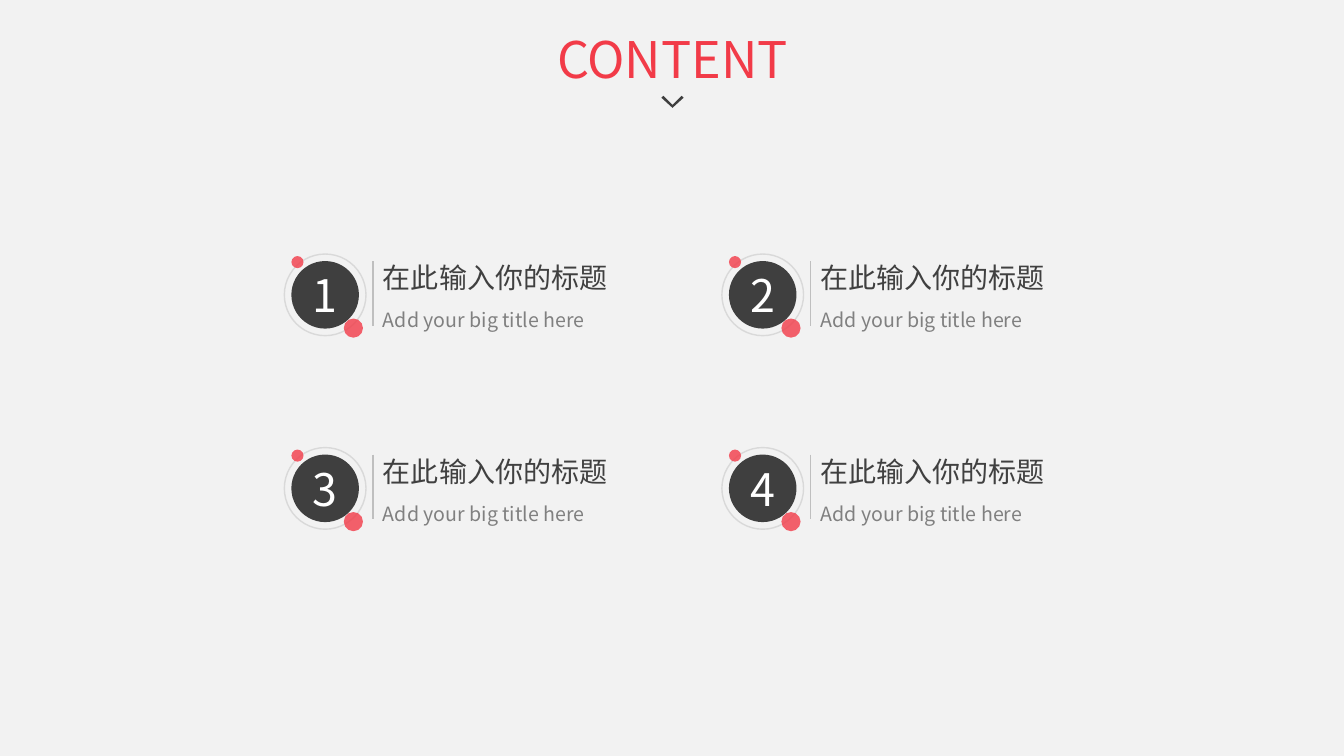
from lxml import etree
from pptx import Presentation
from pptx.dml.color import RGBColor
from pptx.enum import shapes, text
from pptx.oxml.ns import qn
from pptx.util import Inches, Pt

FONT = "Noto Sans CJK SC"
BACKGROUND = RGBColor(0xF2, 0xF2, 0xF2)
RED = RGBColor(0xF2, 0x3B, 0x48)
DARK = RGBColor(0x3F, 0x3F, 0x3F)
HEADING = RGBColor(0x40, 0x40, 0x40)
GRAY = RGBColor(0x80, 0x80, 0x80)
RING = RGBColor(0xD9, 0xD9, 0xD9)
DIVIDER = RGBColor(0xBF, 0xBF, 0xBF)
WHITE = RGBColor(0xFF, 0xFF, 0xFF)

COLUMNS = (2.82, 7.16)
ROWS = (2.52, 4.44)
CHEVRON = ((6.76, 0.95), (6.78, 0.97), (6.67, 1.07),
           (6.56, 0.97), (6.58, 0.95), (6.67, 1.04))


def write(shape, words, size, color, alignment):
    frame = shape.text_frame
    frame.text = words
    paragraph = frame.paragraphs[0]
    paragraph.alignment = alignment
    run = paragraph.runs[0]
    run.font.size = Pt(size)
    run.font.color.rgb = color
    run.font.name = FONT
    etree.SubElement(run.font._element, qn("a:ea"), typeface=FONT)


def add_label(parent, words, left, top, width, height, size, color, alignment):
    box = parent.add_textbox(Inches(left), Inches(top), Inches(width), Inches(height))
    box.text_frame.word_wrap = True
    box.text_frame.auto_size = text.MSO_AUTO_SIZE.SHAPE_TO_FIT_TEXT
    write(box, words, size, color, alignment)


def add_circle(parent, left, top, diameter):
    circle = parent.add_shape(shapes.MSO_SHAPE.OVAL, Inches(left), Inches(top),
                              Inches(diameter), Inches(diameter))
    circle.shadow.inherit = False
    return circle


def add_disc(parent, left, top, diameter, color, opacity=100):
    """Add a filled circle without outline; opacity is a percentage."""
    disc = add_circle(parent, left, top, diameter)
    disc.fill.solid()
    disc.fill.fore_color.rgb = color
    disc.line.fill.background()
    if opacity < 100:
        color_element = disc._element.spPr.find(".//" + qn("a:srgbClr"))
        etree.SubElement(color_element, qn("a:alpha"), val=str(opacity * 1000))
    return disc


def add_ring(parent, left, top, diameter):
    ring = add_circle(parent, left, top, diameter)
    ring.fill.background()
    ring.line.color.rgb = RING
    ring.line.width = Pt(1)


def add_divider(parent, x, top, bottom):
    divider = parent.add_connector(shapes.MSO_CONNECTOR.STRAIGHT, Inches(x),
                                   Inches(top), Inches(x), Inches(bottom))
    divider.line.color.rgb = DIVIDER
    divider.line.width = Pt(1)
    etree.SubElement(divider._element.spPr, qn("a:effectLst"))


def add_item(slide, number, left, top):
    """Add a numbered badge with its heading and subtitle as one group."""
    item = slide.shapes.add_group_shape().shapes
    badge = add_disc(item, left + 0.07, top + 0.07, 0.67, DARK)
    frame = badge.text_frame
    frame.margin_left = frame.margin_right = 0
    frame.margin_top = frame.margin_bottom = 0
    frame.word_wrap = False
    frame.vertical_anchor = text.MSO_ANCHOR.MIDDLE
    write(badge, str(number), 32, WHITE, text.PP_ALIGN.CENTER)
    add_ring(item, left, top, 0.81)
    add_disc(item, left + 0.59, top + 0.64, 0.19, RED, 80)
    add_disc(item, left + 0.07, top + 0.02, 0.12, RED, 80)
    text_left = left + 0.88
    add_label(item, "在此输入你的标题", text_left, top + 0.02, 2.47, 0.43,
              20, HEADING, text.PP_ALIGN.JUSTIFY)
    add_label(item, "Add your big title here", text_left, top + 0.49, 2.47, 0.33,
              14, GRAY, text.PP_ALIGN.JUSTIFY)
    add_divider(item, text_left, top + 0.07, top + 0.71)


def add_chevron(slide):
    start, *others = [(Inches(x), Inches(y)) for x, y in CHEVRON]
    builder = slide.shapes.build_freeform(*start)
    builder.add_line_segments(others, close=True)
    chevron = builder.convert_to_shape()
    chevron.shadow.inherit = False
    chevron.fill.solid()
    chevron.fill.fore_color.rgb = DARK
    chevron.line.fill.background()


def main():
    presentation = Presentation()
    presentation.slide_width = Inches(13.33)
    presentation.slide_height = Inches(7.5)
    slide = presentation.slides.add_slide(presentation.slide_layouts[6])
    slide.background.fill.solid()
    slide.background.fill.fore_color.rgb = BACKGROUND

    positions = [(left, top) for top in ROWS for left in COLUMNS]
    for number, (left, top) in enumerate(positions, start=1):
        add_item(slide, number, left, top)
    add_label(slide.shapes, "CONTENT", 5.24, 0.23, 2.86, 0.7,
              36, RED, text.PP_ALIGN.CENTER)
    add_chevron(slide)
    presentation.save("out.pptx")


if __name__ == "__main__":
    main()
